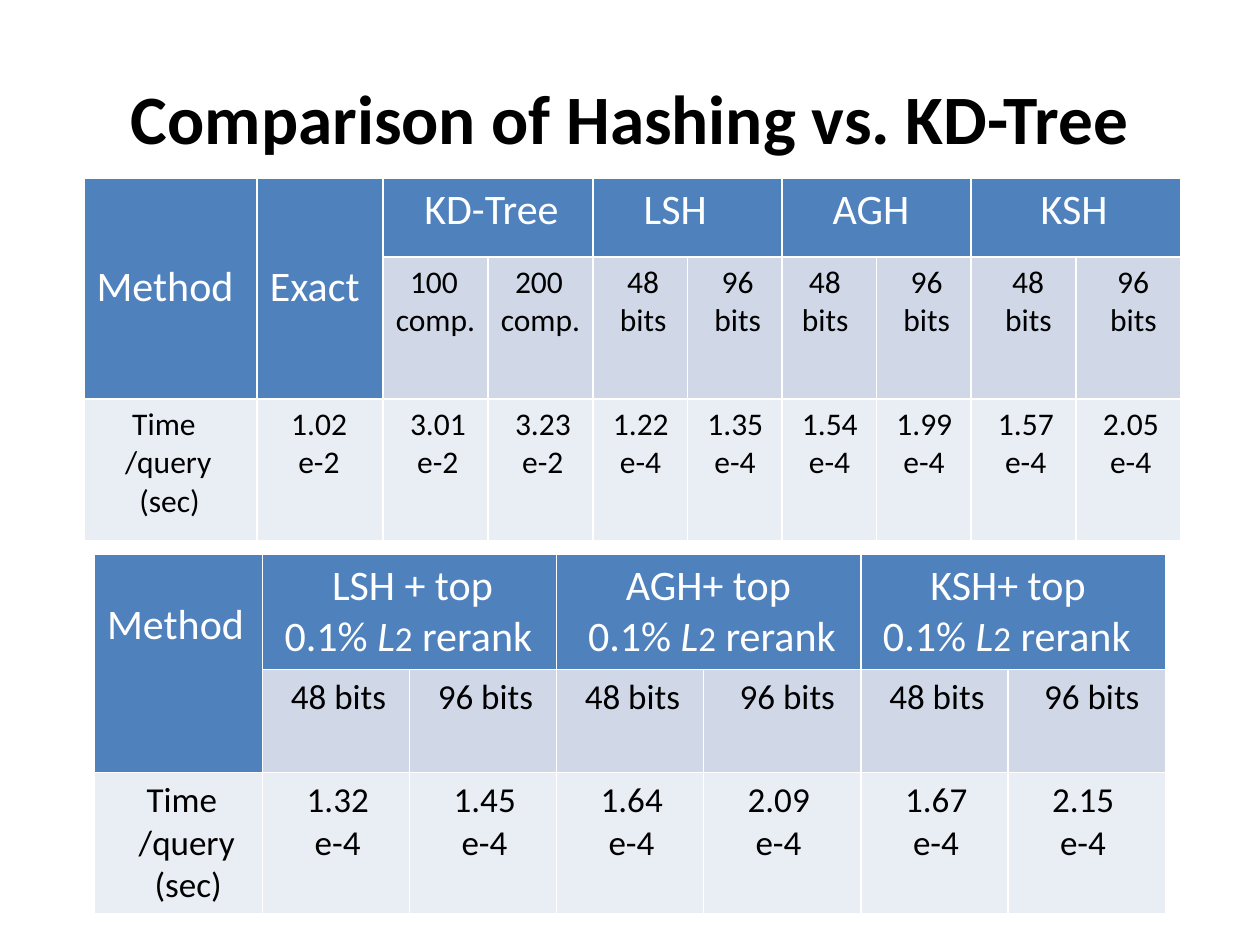
from pptx import Presentation, util as u
from pptx.dml.color import RGBColor
from pptx.enum import text

COLORS = {"head": "4F81BD", "sub": "D0D8E8", "body": "E9EDF4",
          "light": "FFFFFF", "dark": "000000"}
TIME = ("Time\n/query\n(sec)", 5, 4, 6)


class Deck:
    """Hold the style and the current slide, on a grid of twelfths of an inch."""

    font, unit, space, head_size = "Calibri", 1 / 12, 0.226, 24

    def __init__(self):
        self.prs = Presentation()
        self.prs.slide_width, self.prs.slide_height = self.grid(120), self.grid(90)
        self.s = self.prs.slides.add_slide(self.prs.slide_layouts[5])

    def grid(self, n):
        return u.Inches(n * self.unit)

    def style(self, font, size, color, bold=False):
        font.name, font.size, font.bold = self.font, u.Pt(size), bold
        font.color.rgb = RGBColor.from_string(COLORS[color])

    def title(self, words, *box):
        sp = self.s.shapes.title
        sp.left, sp.top, sp.width, sp.height = map(self.grid, box)
        tf = sp.text_frame
        tf.text = words
        tf.vertical_anchor = text.MSO_ANCHOR.MIDDLE
        p = tf.paragraphs[0]
        p.alignment = text.PP_ALIGN.CENTER
        self.style(p.font, 39.6, "dark", True)

    def cell(self, cell, content, size, fill, color):
        words, *indents = content
        cell.fill.solid()
        cell.fill.fore_color.rgb = RGBColor.from_string(COLORS[fill])
        tf = cell.text_frame
        for i, (line, indent) in enumerate(zip(words.split("\n"), indents)):
            p = tf.add_paragraph() if i else tf.paragraphs[0]
            self.style(p.font, size, color)
            margin = u.Pt(indent * self.space * size)
            p._p.get_or_add_pPr().set("marL", str(margin))
            before, norm, after = line.partition("L2")
            p.add_run().text = before
            if norm:
                for part in (*norm, after):
                    p.add_run().text = part
                p.runs[1].font.italic = True
                p.runs[2].font.size = u.Pt(20)

    def table(self, left, top, cols, rows, labels, label_top, groups, sub, body, size):
        frame = self.s.shapes.add_table(len(rows), len(cols), *map(
            self.grid, (left, top, sum(cols), sum(rows))))
        t = frame.table
        for col, n in zip(t.columns, cols):
            col.width = self.grid(n)
        for row, n in zip(t.rows, rows):
            row.height = self.grid(n)
        first = len(labels)
        for c, label in enumerate(labels):
            t.cell(0, c).merge(t.cell(1, c))
            t.cell(0, c).margin_top = u.Inches(label_top)
            self.cell(t.cell(0, c), (label, 0), self.head_size, "head", "light")
        for i, group in enumerate(groups):
            c = first + 2 * i
            t.cell(0, c).merge(t.cell(0, c + 1))
            self.cell(t.cell(0, c), group, self.head_size, "head", "light")
        for r, start, contents, fill in ((1, first, sub, "sub"), (2, 0, body, "body")):
            for c, content in enumerate(contents, start):
                self.cell(t.cell(r, c), content, size, fill, "dark")


def times(values, power, *indents):
    return [(f"{v}\ne-{power}", *indents) for v in values.split()]


def main():
    d = Deck()
    d.title("Comparison of Hashing vs. KD-Tree", 6, 3.6, 108, 15)
    d.table(
        8, 17, [16.5, 12, 10, 10, 9, 9, 9, 9, 10, 10], [7.5, 13.5, 13.5],
        ["Method", "Exact"], 0.66,
        [("KD-Tree", 3), ("LSH", 4), ("AGH", 4), ("KSH", 6)],
        [("100\ncomp.", 2, 0), ("200\ncomp.", 2, 0),
         ("48\nbits", 3, 2), ("96\nbits", 3, 2),
         ("48\nbits", 2, 1), ("96\nbits", 3, 2),
         ("48\nbits", 4, 3), ("96\nbits", 4, 3)],
        [TIME, *times("1.02", 2, 3, 4), *times("3.01 3.23", 2, 2, 3),
         *times("1.22 1.35 1.54 1.99", 4, 1, 2), *times("1.57 2.05", 4, 2, 3)], 18)
    rerank = "top\n0.1% L2 rerank"
    d.table(
        9, 52.8, [16, 14, 14, 14, 15, 14, 15], [10.9, 9.6, 13.5],
        ["Method"], 0.36,
        [(f"LSH + {rerank}", 6, 1), (f"AGH+ {rerank}", 6, 2), (f"KSH+ {rerank}", 6, 1)],
        [(f"{bits} bits", n) for bits, n in
         ((48, 2), (96, 2), (48, 2), (96, 3), (48, 2), (96, 3))],
        [TIME, *times("1.32 1.45 1.64 2.09 1.67 2.15", 4, 4, 5)], 20)
    d.prs.save("out.pptx")


if __name__ == "__main__":
    main()
